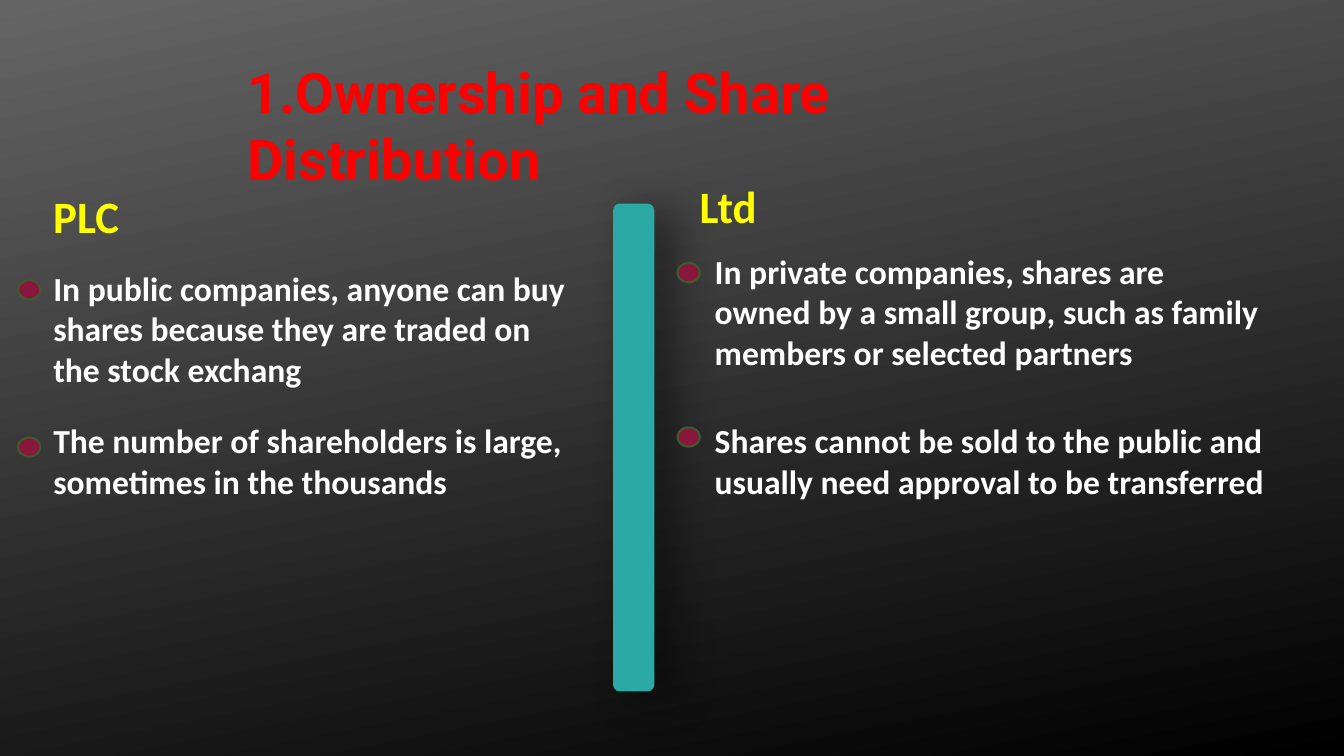
from lxml import etree
from pptx import Presentation
from pptx.dml.color import RGBColor
from pptx.enum import shapes, text
from pptx.oxml import parse_xml
from pptx.oxml.ns import nsdecls
from pptx.util import Inches, Pt

RED = RGBColor(0xFF, 0x00, 0x00)
YELLOW = RGBColor(0xFF, 0xFF, 0x00)
WHITE = RGBColor(0xFF, 0xFF, 0xFF)
BLACK = RGBColor(0x00, 0x00, 0x00)
GREY = RGBColor(0x65, 0x65, 0x65)
TEAL = RGBColor(0x2B, 0xA9, 0xA5)
MAROON = RGBColor(0x89, 0x17, 0x3D)
OLIVE = RGBColor(0x41, 0x5A, 0x2D)


def fill_text(box, words, font_name, size, color):
    """Write one bold paragraph that wraps and grows its box downward."""
    frame = box.text_frame
    frame.word_wrap = True
    frame.auto_size = text.MSO_AUTO_SIZE.SHAPE_TO_FIT_TEXT
    frame.vertical_anchor = text.MSO_ANCHOR.TOP
    paragraph = frame.paragraphs[0]
    paragraph.text = words
    paragraph.alignment = text.PP_ALIGN.LEFT
    font = paragraph.font
    font.name, font.size, font.bold = font_name, Pt(size), True
    font.color.rgb = color


def add_text(left, top, width, height, words, size, color):
    box = slide.shapes.add_textbox(
        Inches(left), Inches(top), Inches(width), Inches(height))
    fill_text(box, words, "Calibri", size, color)


presentation = Presentation()
presentation.slide_width = Inches(13.33)
presentation.slide_height = Inches(7.5)
slide = presentation.slides.add_slide(presentation.slide_layouts[5])

backdrop = slide.background.fill
backdrop.gradient()
backdrop.gradient_angle = 360 - 79
for stop, color in zip(backdrop.gradient_stops, (GREY, BLACK)):
    stop.color.rgb = color

# Numbered title
title = slide.shapes.title
title.left, title.top = Inches(2.35), Inches(0.52)
title.width, title.height = Inches(8.96), Inches(0.77)
heading = title.text_frame.paragraphs[0]
heading.space_before = heading.space_after = Pt(3)
numbering = heading._p.get_or_add_pPr()
numbering.set("marL", "0")
numbering.set("indent", "0")
for bullet in (
    f'<a:buClr {nsdecls("a")}><a:srgbClr val="{RED}"/></a:buClr>',
    f'<a:buFont {nsdecls("a")} typeface="Roboto"/>',
    f'<a:buAutoNum {nsdecls("a")} type="arabicPeriod"/>',
):
    numbering.append(parse_xml(bullet))
fill_text(title, "Ownership and Share Distribution", "Roboto", 40, RED)

# Divider between the two company types
divider = slide.shapes.add_shape(
    shapes.MSO_SHAPE.FLOWCHART_ALTERNATE_PROCESS,
    Inches(6.08), Inches(2.02), Inches(0.41), Inches(4.84))
divider.fill.solid()
divider.fill.fore_color.rgb = TEAL
divider.line.fill.background()
divider.shadow.inherit = False
effects = divider._element.spPr.find("{*}effectLst")
shadow = etree.SubElement(
    effects, effects.tag.replace("effectLst", "outerShdw"),
    blurRad=str(Pt(30)), dist=str(Pt(15)), dir=str(18 * 60000),
    algn="ctr", rotWithShape="0")
shadow.append(parse_xml(
    f'<a:srgbClr {nsdecls("a")} val="{BLACK}"><a:alpha val="45000"/></a:srgbClr>'))

# Company type, its place, and the left edges of its points and dots
companies = [
    ("PLC", 0.43, 1.82, 0.43, 0.18, [
        (2.61, 5.31, 1.31, 2.78,
         "In public companies, anyone can buy shares because they are traded "
         "on the stock exchang"),
        (4.12, 5.48, 0.91, 4.34,
         "The number of shareholders is large, sometimes in the thousands"),
    ]),
    ("Ltd", 6.84, 1.72, 6.99, 6.72, [
        (2.44, 5.64, 1.31, 2.61,
         "In private companies, shares are owned by a small group, such as "
         "family members or selected partners"),
        (4.12, 6.67, 0.91, 4.24,
         "Shares cannot be sold to the public and usually need approval to be "
         "transferred"),
    ]),
]
for company, company_left, company_top, point_left, dot_left, points in companies:
    add_text(company_left, company_top, 6.83, 0.64, company, 32, YELLOW)
    for top, width, height, dot_top, point in points:
        add_text(point_left, top, width, height, point, 24, WHITE)
        dot = slide.shapes.add_shape(
            shapes.MSO_SHAPE.OVAL,
            Inches(dot_left), Inches(dot_top), Inches(0.22), Inches(0.19))
        dot.fill.solid()
        dot.fill.fore_color.rgb = MAROON
        dot.line.color.rgb = OLIVE
        dot.line.width = Pt(1.5)
        dot.shadow.inherit = False

presentation.save("out.pptx")
